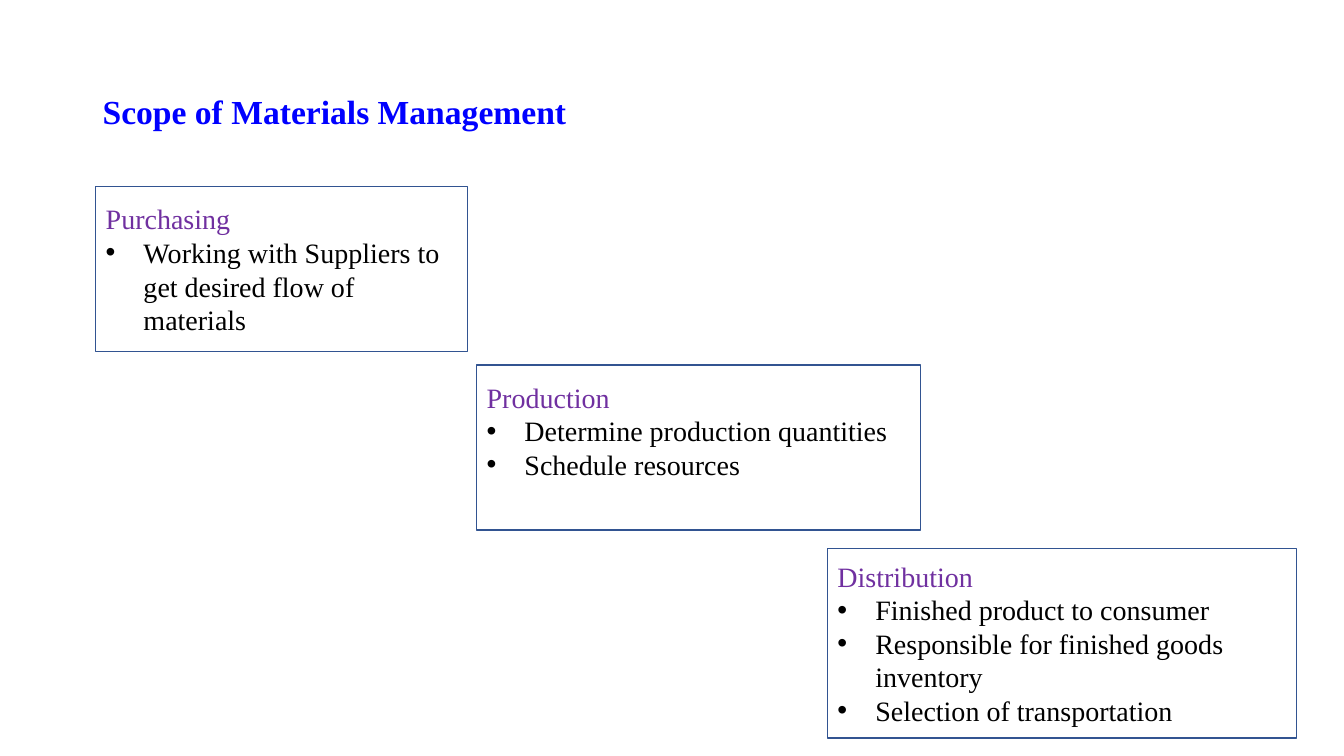
import dataclasses
import pptx
import pptx.dml.color
import pptx.enum.shapes
import pptx.enum.text
import pptx.oxml
import pptx.oxml.ns
import pptx.util
from lxml import etree

Pt = pptx.util.Pt


@dataclasses.dataclass(frozen=True)
class Theme:
    font: str = "Times New Roman"
    title_color: str = "0000FF"
    heading_color: str = "7030A0"
    body_color: str = "000000"
    box_fill: str = "FFFFFF"
    box_line: str = "325491"
    title_size: float = 24
    body_size: float = 20
    line_width: float = 1
    bullet_indent: float = 27


def rgb(value):
    return pptx.dml.color.RGBColor.from_string(value)


def write_text(para, text, *, font, size, color, bold=False, line_spacing=None):
    para.alignment = pptx.enum.text.PP_ALIGN.LEFT
    if line_spacing:
        para.line_spacing = line_spacing
    span = para.add_run()
    span.text = text
    span.font.name = font
    span.font.size = Pt(size)
    span.font.bold = bold
    span.font.color.rgb = rgb(color)


def add_bullet(para, indent):
    properties = para._p.get_or_add_pPr()
    properties.set("marL", str(Pt(indent)))
    properties.set("indent", str(-Pt(indent)))
    qn = pptx.oxml.ns.qn
    etree.SubElement(properties, qn("a:buFont"), typeface="Arial")
    etree.SubElement(properties, qn("a:buChar"), char="•")


class SlideBuilder:
    def __init__(self, page, theme):
        self.page = page
        self.theme = theme

    def title(self, text, left, top, width, height):
        theme = self.theme
        box = self.page.shapes.add_textbox(Pt(left), Pt(top), Pt(width), Pt(height))
        frame = box.text_frame
        frame.word_wrap = True
        frame.vertical_anchor = pptx.enum.text.MSO_ANCHOR.MIDDLE
        write_text(frame.paragraphs[0], text, font=theme.font, size=theme.title_size,
                   color=theme.title_color, bold=True, line_spacing=0.9)

    def stage(self, heading, bullets, left, top, width, height, bottom_inset=3.6):
        theme = self.theme
        box = self.page.shapes.add_shape(
            pptx.enum.shapes.MSO_SHAPE.RECTANGLE, Pt(left), Pt(top), Pt(width), Pt(height))
        box.shadow.inherit = False
        box.fill.solid()
        box.fill.fore_color.rgb = rgb(theme.box_fill)
        box.line.color.rgb = rgb(theme.box_line)
        box.line.width = Pt(theme.line_width)
        frame = box.text_frame
        frame.word_wrap = True
        frame.vertical_anchor = pptx.enum.text.MSO_ANCHOR.MIDDLE
        frame.margin_bottom = Pt(bottom_inset)
        write_text(frame.paragraphs[0], heading, font=theme.font,
                   size=theme.body_size, color=theme.heading_color)
        for bullet in bullets:
            para = frame.add_paragraph()
            write_text(para, bullet, font=theme.font,
                       size=theme.body_size, color=theme.body_color)
            add_bullet(para, theme.bullet_indent)


def main():
    deck = pptx.Presentation()
    deck.slide_width = Pt(960)
    deck.slide_height = Pt(540)
    page = deck.slides.add_slide(deck.slide_layouts[6])
    builder = SlideBuilder(page, Theme())

    builder.title("Scope of Materials Management", 66.24, 28.8, 828, 104.4)
    builder.stage("Purchasing",
                  ["Working with Suppliers to get desired flow of materials"],
                  68.4, 133.2, 265.68, 118.08)
    builder.stage("Production",
                  ["Determine production quantities", "Schedule resources"],
                  340.56, 260.64, 316.8, 118.08, bottom_inset=27.6)
    builder.stage("Distribution",
                  ["Finished product to consumer",
                   "Responsible for finished goods inventory",
                   "Selection of transportation"],
                  591.12, 391.68, 334.8, 135.36)
    deck.save("out.pptx")


if __name__ == "__main__":
    main()
